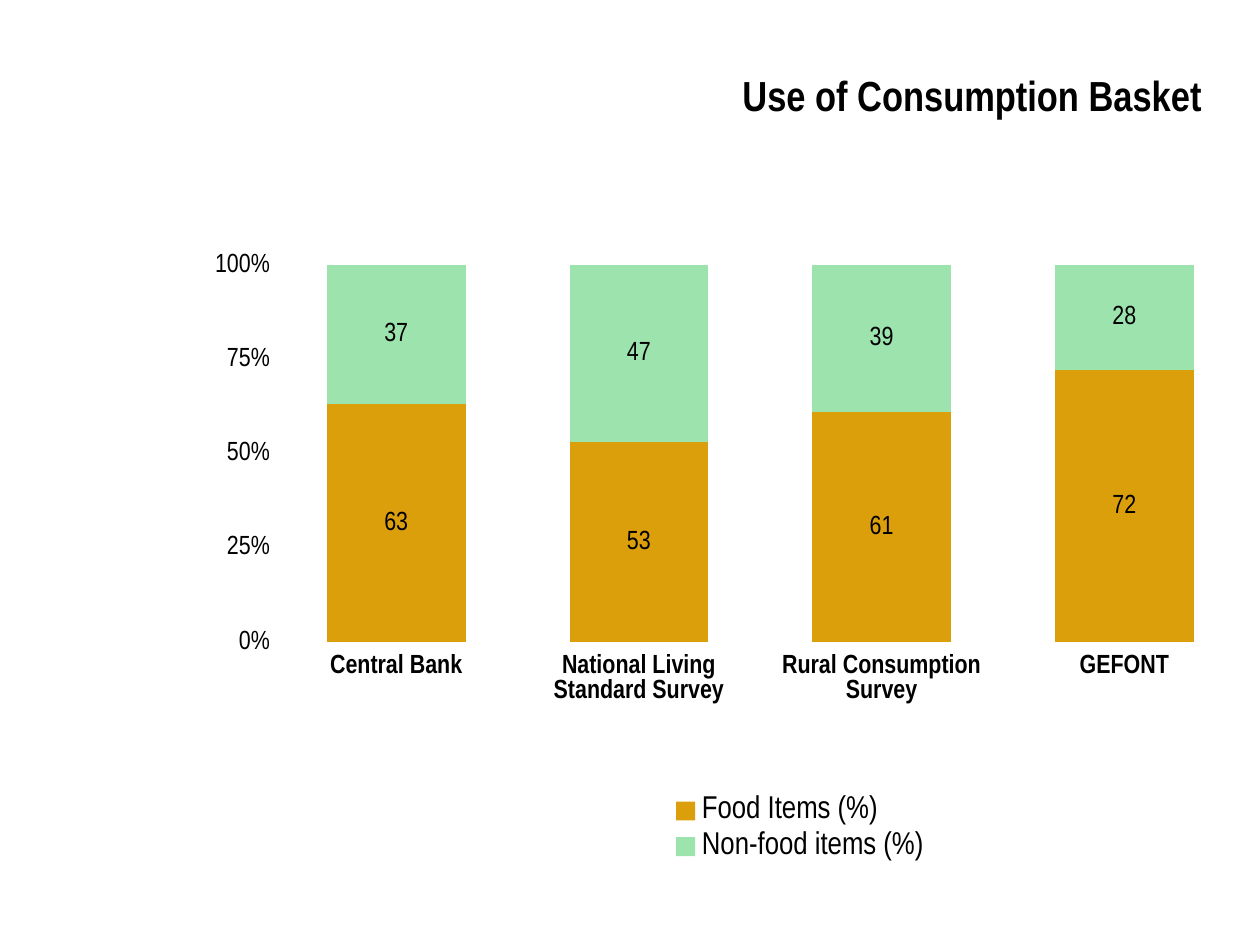
from dataclasses import dataclass

from lxml import etree
from pptx import Presentation
from pptx import util as u
from pptx.chart import data as cd
from pptx.dml.color import RGBColor
from pptx.enum import chart as ce, text
from pptx.oxml import ns

PX = 914400 // 126


@dataclass(frozen=True)
class Theme:
    """Colours, face and type sizes of the slide."""
    ink: str = "000000"
    fills: tuple = ("DC9F0C", "9DE3AE")
    face: str = "Arial Narrow"
    title: int = 24
    label: int = 15
    key: int = 18


THEME = Theme()


def style(font, size, bold=False):
    """Set face, size, weight and colour of a font."""
    font.name = THEME.face
    font.size = u.Pt(size)
    font.bold = bold
    font.color.rgb = RGBColor.from_string(THEME.ink)


def scale(box):
    """Turn a box in px into EMU."""
    return [n * PX for n in box]


def place(parent, tags, box, part, frame):
    """Give a chart part a manual layout, with its px box inside the frame."""
    old = parent.find(ns.qn("c:layout"))
    if old is not None:
        parent.remove(old)
    lay = etree.Element(ns.qn("c:layout"))
    man = etree.SubElement(lay, ns.qn("c:manualLayout"))
    pairs = [("layoutTarget", "inner")] if part == "plot" else []
    pairs += [("xMode", "edge"), ("yMode", "edge")]
    sizes = (frame[2], frame[3]) * 2
    pairs += [(k, f"{n / s:.3f}") for k, n, s in zip("xywh", box, sizes)]
    for key, val in pairs:
        etree.SubElement(man, ns.qn("c:" + key)).set("val", val)
    spot = 0
    for i, kid in enumerate(parent):
        if kid.tag in [ns.qn("c:" + t) for t in tags]:
            spot = i + 1
    parent.insert(spot, lay)


def add_title(slide, box):
    """Write the slide title, set to the right of its box."""
    frame = slide.shapes.add_textbox(*scale(box)).text_frame
    frame.word_wrap = True
    frame.margin_left = frame.margin_right = u.Inches(0.05)
    frame.margin_top = frame.margin_bottom = u.Inches(0.05)
    frame.text = "Use of Consumption Basket"
    para = frame.paragraphs[0]
    para.alignment = text.PP_ALIGN.RIGHT
    style(para.runs[0].font, THEME.title, True)


def style_axis(axis, bold=False):
    """Strip an axis down to its labels."""
    axis.has_major_gridlines = False
    axis.major_tick_mark = axis.minor_tick_mark = ce.XL_TICK_MARK.NONE
    axis.format.line.fill.background()
    style(axis.tick_labels.font, THEME.label, bold)


def add_basket(slide, box):
    """Draw the stacked shares of food and non-food items."""
    data = cd.CategoryChartData(number_format="0")
    data.categories = ["Central Bank", "National Living Standard Survey",
                       "Rural Consumption Survey", "GEFONT"]
    data.add_series("Food Items (%)", (63, 53, 61, 72))
    data.add_series("Non-food items (%)", (37, 47, 39, 28))
    kind = ce.XL_CHART_TYPE.COLUMN_STACKED_100
    chart = slide.shapes.add_chart(kind, *scale(box), data).chart
    chart.has_title = False
    style(chart.font, THEME.label)

    style_axis(chart.category_axis, True)
    chart.category_axis.tick_label_position = ce.XL_TICK_LABEL_POSITION.LOW
    axis = chart.value_axis
    style_axis(axis)
    axis.minimum_scale, axis.maximum_scale, axis.major_unit = 0, 1, 0.25
    axis.tick_labels.number_format = "0%"
    axis.tick_labels.number_format_is_linked = False

    plot = chart.plots[0]
    plot.gap_width, plot.overlap = 75, 100
    plot.vary_by_categories = False
    for series, fill in zip(plot.series, THEME.fills):
        series.format.fill.solid()
        series.format.fill.fore_color.rgb = RGBColor.from_string(fill)
        tags = series.data_labels
        tags.show_value = True
        tags.number_format = "0"
        tags.number_format_is_linked = False
        style(tags.font, THEME.label)

    chart.has_legend = True
    key = chart.legend
    key.position = ce.XL_LEGEND_POSITION.BOTTOM
    key.include_in_layout = True
    style(key.font, THEME.key)
    root = chart.element
    place(root.find(".//" + ns.qn("c:plotArea")), (),
          (57, 13, 974, 377), "plot", box)
    place(root.find(".//" + ns.qn("c:legend")), ("legendPos", "legendEntry"),
          (459, 538, 250, 78), "key", box)


def main():
    """Build and save the slide."""
    deck = Presentation()
    deck.slide_width, deck.slide_height = u.Inches(10), u.Inches(7.5)
    slide = deck.slides.add_slide(deck.slide_layouts[6])
    add_basket(slide, (215, 252, 1036, 617))
    add_title(slide, (179, 63, 1029, 59))
    deck.save("out.pptx")


if __name__ == "__main__":
    main()
